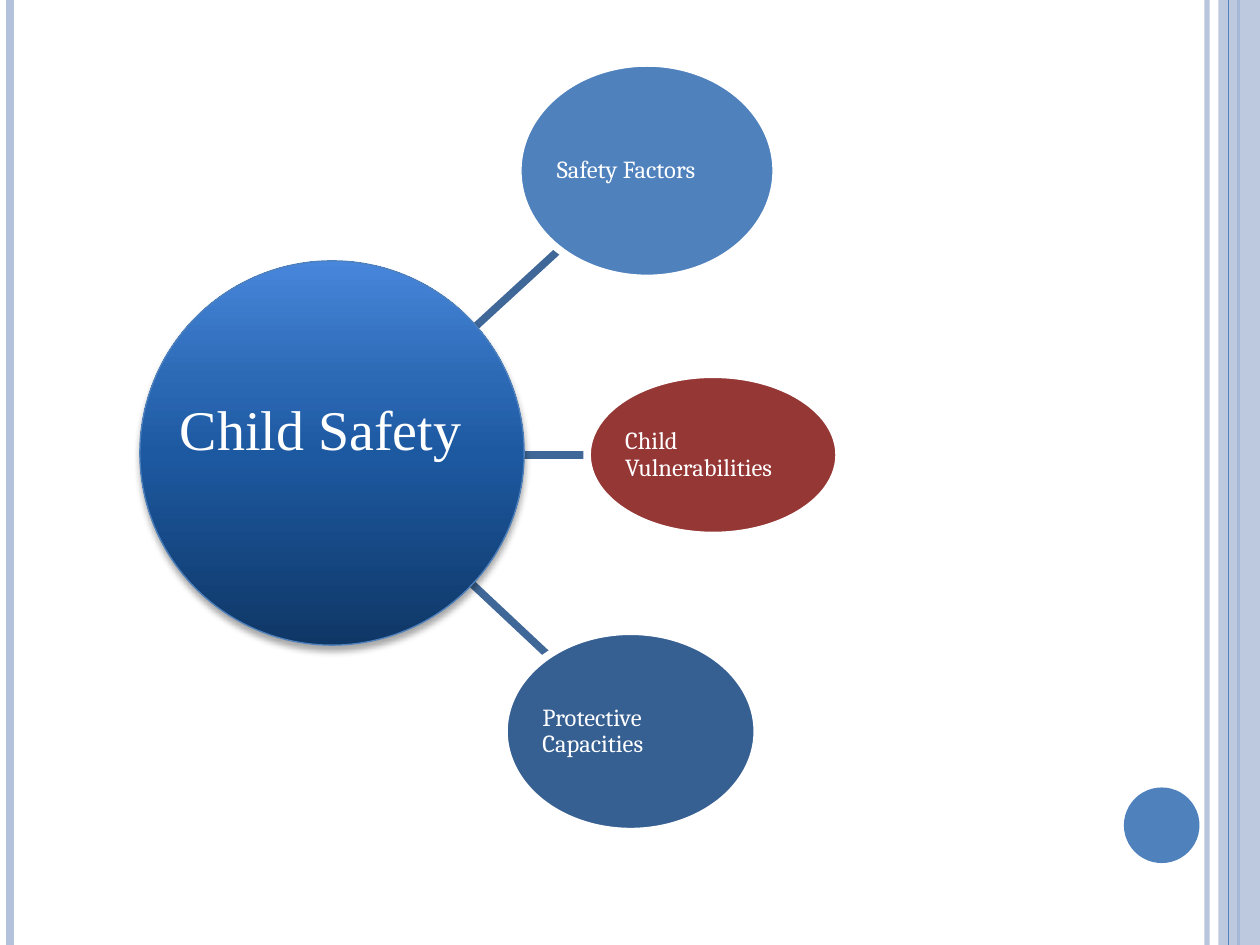
from dataclasses import dataclass

from lxml import etree
from pptx import Presentation
from pptx.dml.color import RGBColor
from pptx.enum.shapes import MSO_CONNECTOR, MSO_SHAPE
from pptx.enum.text import MSO_ANCHOR, MSO_AUTO_SIZE, PP_ALIGN
from pptx.oxml import parse_xml
from pptx.oxml.ns import qn
from pptx.util import Inches, Pt

STRAIGHT = MSO_CONNECTOR.STRAIGHT
OVAL, RECTANGLE = MSO_SHAPE.OVAL, MSO_SHAPE.RECTANGLE
MIDDLE, LEFT = MSO_ANCHOR.MIDDLE, PP_ALIGN.LEFT
FIT_SHAPE = MSO_AUTO_SIZE.SHAPE_TO_FIT_TEXT
NAMESPACE = 'xmlns:a="http://schemas.openxmlformats.org/drawingml/2006/main"'


@dataclass(frozen=True)
class Theme:
    accent: str = "4F81BD"
    pale: str = "B3C1DB"
    spoke: str = "3F6797"
    red: str = "953735"
    navy: str = "376092"
    white: str = "FFFFFF"
    hub_stops: tuple = ((0, "0F3766"), (50, "1D59A1"), (70, "2D6AB6"), (100, "4786DB"))
    hub_font: str = "Times New Roman"
    factor_font: str = "Cambria"
    hub_size: int = 32
    factor_size: int = 14
    spoke_width: float = 4.33
    hairline: float = 0.75


THEME = Theme()
WIDTH, HEIGHT = 10, 7.5

RULES = [
    (9.58, THEME.pale, 3, 93),
    (0.08, THEME.pale, 4.5, 100),
    (9.83, THEME.accent, 1.5, 100),
]
SIDE_BAND = (9.67, 0, 0.33, HEIGHT)
BAND_RULE = (9.75, THEME.accent, THEME.hairline, 100)
PAGE_DOT = (8.92, 6.25, 0.6, 0.6)
HUB = (1.11, 2.07, 3.05, 3.05)
HUB_TITLE = ("Child Safety", (1.33, 3.08, 2.46, 0.64))
SPOKES = [
    ((3.71, 4.6), (4.35, 5.2)),
    ((3.71, 3.61), (4.66, 3.61)),
    ((3.71, 2.65), (4.44, 1.98)),
]
FACTORS = [
    ("Safety Factors", (4.11, 0.5, 2.05, 1.71), THEME.accent),
    ("Child Vulnerabilities", (4.66, 2.97, 2, 1.28), THEME.red),
    ("Protective Capacities", (4, 5.01, 2.01, 1.59), THEME.navy),
]


def color(value):
    return RGBColor.from_string(value)


def set_opacity(fill, percent):
    sample = fill._xPr.find(".//" + qn("a:srgbClr"))
    etree.SubElement(sample, qn("a:alpha")).set("val", str(percent * 1000))


def add_line(page, start, end, line_color, width, opacity=100):
    line = page.shapes.add_connector(STRAIGHT, *map(Inches, start + end))
    line.line.color.rgb = color(line_color)
    line.line.width = Pt(width)
    if opacity < 100:
        set_opacity(line.line.fill, opacity)
    etree.SubElement(line._element.spPr, qn("a:effectLst"))


def add_rule(page, x, line_color, width, opacity):
    add_line(page, (x, 0), (x, HEIGHT), line_color, width, opacity)


def add_shape(page, kind, bounds, fill_color, line_color=None, width=0):
    shape = page.shapes.add_shape(kind, *map(Inches, bounds))
    shape.shadow.inherit = False
    shape.fill.solid()
    shape.fill.fore_color.rgb = color(fill_color)
    if line_color:
        shape.line.color.rgb = color(line_color)
        shape.line.width = Pt(width)
    else:
        shape.line.fill.background()
    return shape


def write(frame, words, font_name, size):
    para = frame.paragraphs[0]
    para.text = words
    para.alignment = LEFT
    para.font.name = font_name
    para.font.size = Pt(size)
    para.font.color.rgb = color(THEME.white)
    return para


def add_hub(page):
    hub = add_shape(page, OVAL, HUB, THEME.accent, THEME.accent, THEME.hairline)
    properties = hub._element.spPr
    stops = "".join(
        f'<a:gs pos="{position * 1000}"><a:srgbClr val="{value}"/></a:gs>'
        for position, value in THEME.hub_stops
    )
    gradient = parse_xml(
        f'<a:gradFill {NAMESPACE} rotWithShape="1"><a:gsLst>{stops}</a:gsLst>'
        '<a:lin ang="16200000" scaled="0"/></a:gradFill>'
    )
    properties.replace(properties.find(qn("a:solidFill")), gradient)
    shadow = parse_xml(
        f'<a:outerShdw {NAMESPACE} blurRad="{Pt(4)}" dist="{Pt(3)}" dir="5400000" rotWithShape="0">'
        '<a:srgbClr val="000000"><a:alpha val="35000"/></a:srgbClr></a:outerShdw>'
    )
    properties.find(qn("a:effectLst")).append(shadow)


def add_factor(page, words, bounds, fill_color):
    factor = add_shape(page, OVAL, bounds, fill_color, THEME.white, THEME.spoke_width)
    frame = factor.text_frame
    frame.word_wrap = True
    frame.vertical_anchor = MIDDLE
    frame.margin_left = frame.margin_right = Inches(0.01)
    frame.margin_top = frame.margin_bottom = Inches(0.01)
    para = write(frame, words, THEME.factor_font, THEME.factor_size)
    para.line_spacing = 0.9


def add_hub_title(page):
    words, bounds = HUB_TITLE
    box = page.shapes.add_textbox(*map(Inches, bounds))
    box.text_frame.word_wrap = False
    box.text_frame.auto_size = FIT_SHAPE
    write(box.text_frame, words, THEME.hub_font, THEME.hub_size)


def main():
    deck = Presentation()
    deck.slide_width, deck.slide_height = Inches(WIDTH), Inches(HEIGHT)
    page = deck.slides.add_slide(deck.slide_layouts[6])
    for rule in RULES:
        add_rule(page, *rule)
    band = add_shape(page, RECTANGLE, SIDE_BAND, THEME.pale)
    set_opacity(band.fill, 87)
    add_rule(page, *BAND_RULE)
    add_shape(page, OVAL, PAGE_DOT, THEME.accent)
    for start, end in SPOKES:
        add_line(page, start, end, THEME.spoke, THEME.spoke_width)
    add_hub(page)
    for factor in FACTORS:
        add_factor(page, *factor)
    add_hub_title(page)
    deck.save("out.pptx")


if __name__ == "__main__":
    main()
